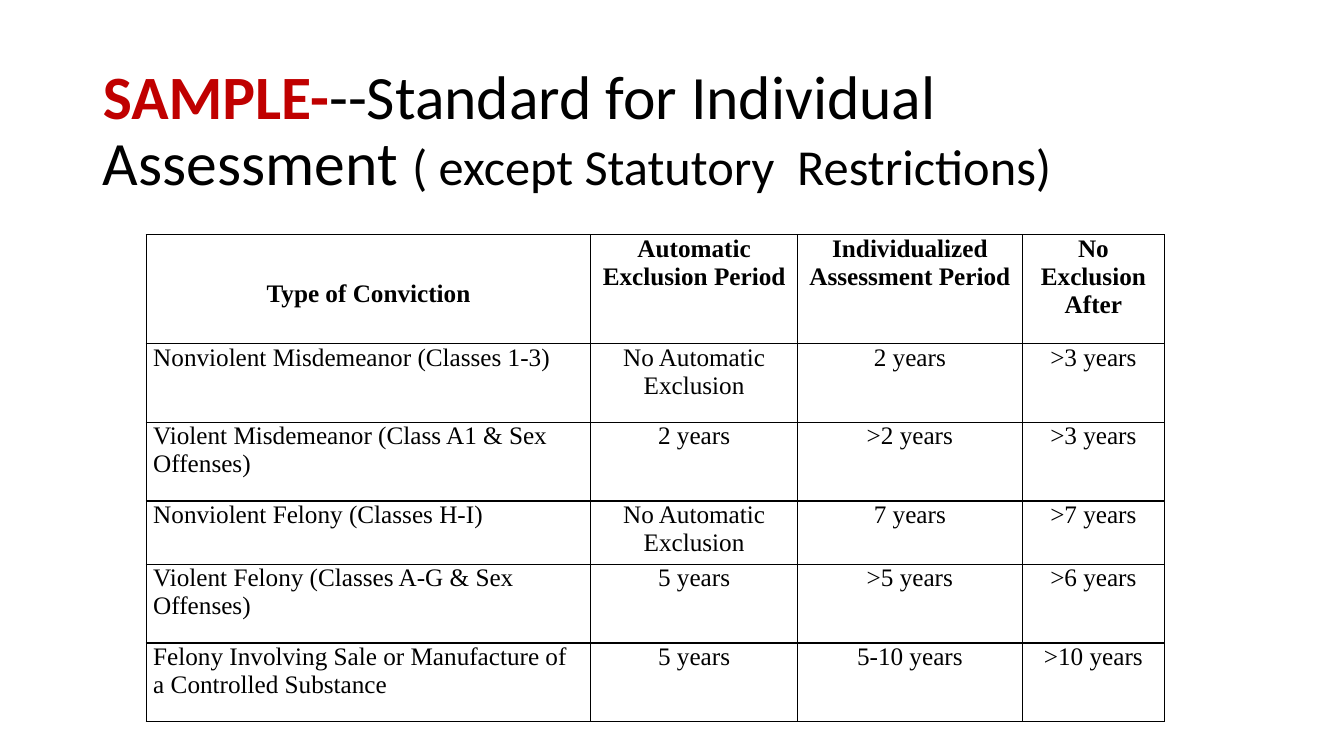
from lxml import etree
from pptx import Presentation
from pptx.dml.color import RGBColor
from pptx.enum.text import MSO_ANCHOR, MSO_AUTO_SIZE, PP_ALIGN
from pptx.oxml.ns import qn
from pptx.util import Inches, Pt

LEFT, CENTER = PP_ALIGN.LEFT, PP_ALIGN.CENTER
TOP, MIDDLE = MSO_ANCHOR.TOP, MSO_ANCHOR.MIDDLE
FIXED_SIZE = MSO_AUTO_SIZE.NONE
TITLE_ONLY = 5
BLACK, WHITE, RED = "000000", "FFFFFF", "C00000"

TITLE_BOX = (0.92, 0.4, 11.5, 1.83)
TABLE_BOX = (1.45, 2.33, 10.1, 4.83)
COLUMN_WIDTHS = (4.41, 2.05, 2.23, 1.41)
ROW_HEIGHTS = (1.08, 0.78, 0.78, 0.63, 0.78, 0.78)

TITLE_RUNS = (
    ("SAMPLE-", 44, RED, True),
    ("--Standard for Individual Assessment ", 44, BLACK, False),
    ("( except Statutory  Restrictions)", 36, BLACK, False),
)
STANDARDS = (
    ("Type of Conviction", "Automatic Exclusion Period",
     "Individualized Assessment Period", "No Exclusion After"),
    ("Nonviolent Misdemeanor (Classes 1-3)", "No Automatic Exclusion", "2 years", ">3 years"),
    ("Violent Misdemeanor (Class A1 & Sex Offenses)", "2 years", ">2 years", ">3 years"),
    ("Nonviolent Felony (Classes H-I)", "No Automatic Exclusion", "7 years", ">7 years"),
    ("Violent Felony (Classes A-G & Sex Offenses)", "5 years", ">5 years", ">6 years"),
    ("Felony Involving Sale or Manufacture of a Controlled Substance",
     "5 years", "5-10 years", ">10 years"),
)


def color(hex_string):
    return RGBColor.from_string(hex_string)


def style_font(font, name, size, hex_string, bold):
    font.name = name
    font.size = Pt(size)
    font.color.rgb = color(hex_string)
    font.bold = bold


def add_title(slide, box):
    title = slide.shapes.title
    title.left, title.top, title.width, title.height = map(Inches, box)
    frame = title.text_frame
    frame.word_wrap = True
    frame.auto_size = FIXED_SIZE
    frame.vertical_anchor = MIDDLE
    paragraph = frame.paragraphs[0]
    paragraph.alignment = LEFT
    paragraph.line_spacing = 0.9
    for text, size, hex_string, bold in TITLE_RUNS:
        run = paragraph.add_run()
        run.text = text
        style_font(run.font, "Calibri", size, hex_string, bold)


def set_borders(cell, hex_string, width):
    properties = cell._tc.get_or_add_tcPr()
    for position, side in enumerate(("lnL", "lnR", "lnT", "lnB")):
        line = etree.Element(qn(f"a:{side}"), w=str(Pt(width)))
        fill = etree.SubElement(line, qn("a:solidFill"))
        etree.SubElement(fill, qn("a:srgbClr"), val=hex_string)
        properties.insert(position, line)


def fill_cell(cell, text, is_header, is_first_column):
    cell.margin_left = cell.margin_right = Inches(0.07)
    cell.margin_top = cell.margin_bottom = 0
    cell.vertical_anchor = TOP
    cell.fill.solid()
    cell.fill.fore_color.rgb = color(WHITE)
    set_borders(cell, BLACK, 1)
    cell.text_frame.text = text
    paragraph = cell.text_frame.paragraphs[0]
    paragraph.alignment = LEFT if is_first_column and not is_header else CENTER
    paragraph.space_after = Pt(6)
    style_font(paragraph.runs[0].font, "Times New Roman", 18, BLACK, is_header)
    if is_header and is_first_column:
        cell.vertical_anchor = MIDDLE
        cell.margin_top = Inches(0.1)


def add_standards_table(slide, box):
    frame = slide.shapes.add_table(len(STANDARDS), len(COLUMN_WIDTHS), *map(Inches, box))
    table = frame.table
    table.first_row = table.horz_banding = False
    for column, width in zip(table.columns, COLUMN_WIDTHS):
        column.width = Inches(width)
    for row, height in zip(table.rows, ROW_HEIGHTS):
        row.height = Inches(height)
    for row_index, texts in enumerate(STANDARDS):
        for column_index, text in enumerate(texts):
            fill_cell(table.cell(row_index, column_index), text,
                      row_index == 0, column_index == 0)


def main():
    presentation = Presentation()
    presentation.slide_width = Inches(13.33)
    presentation.slide_height = Inches(7.5)
    slide = presentation.slides.add_slide(presentation.slide_layouts[TITLE_ONLY])
    add_title(slide, TITLE_BOX)
    add_standards_table(slide, TABLE_BOX)
    presentation.save("out.pptx")


if __name__ == "__main__":
    main()
